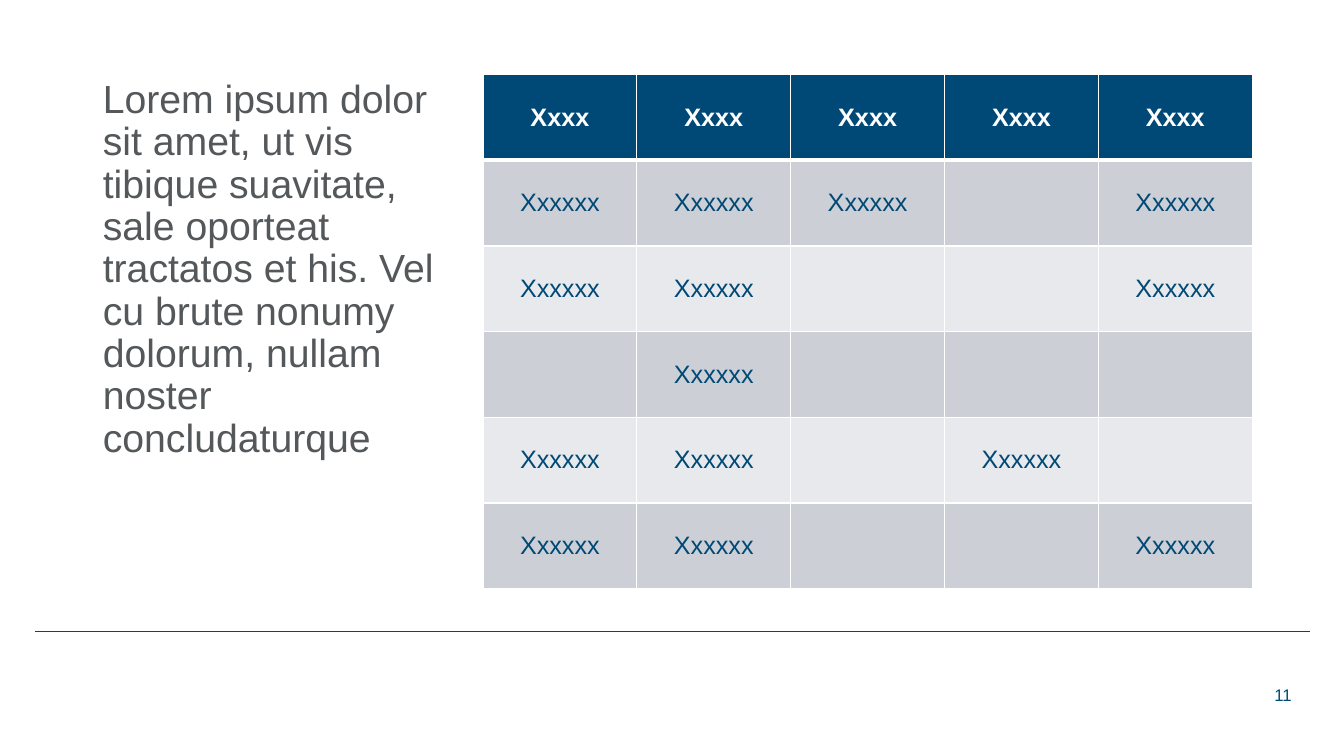
from dataclasses import dataclass

from lxml import etree
from pptx import Presentation
from pptx.dml.color import RGBColor
from pptx.enum import shapes, text
from pptx.oxml import ns
from pptx.util import Inches, Pt


@dataclass(frozen=True)
class Theme:
    font: str = "Arial"
    blue: str = "004976"
    grey: str = "54585A"
    white: str = "FFFFFF"
    bands: tuple = ("CCD0D6", "E7E9EC")
    intro_size: int = 28
    table_size: int = 18
    number_size: int = 12


THEME = Theme()
HEADER = ["Xxxx"] * 5
ENTRY = "Xxxxxx"
# Columns that hold an entry, for each body row
FILLED_COLUMNS = [(0, 1, 2, 4), (0, 1, 4), (1,), (0, 1, 3), (0, 1, 4)]


def write_text(frame, content, *, size, color, bold=False,
               align=text.PP_ALIGN.LEFT, spacing=None, before=None):
    paragraph = frame.paragraphs[0]
    paragraph.alignment = align
    paragraph.line_spacing = spacing
    paragraph.space_before = before
    run = paragraph.add_run()
    run.text = content
    run.font.name = THEME.font
    run.font.size = Pt(size)
    run.font.bold = bold
    run.font.color.rgb = RGBColor.from_string(color)


def place(shape, left, top, width, height):
    shape.left, shape.top = Inches(left), Inches(top)
    shape.width, shape.height = Inches(width), Inches(height)


def add_intro(slide, content):
    title, intro = slide.shapes.title, slide.placeholders[1]
    title.element.getparent().remove(title.element)
    place(intro, 0.92, 0.74, 3.7, 5.29)
    frame = intro.text_frame
    frame.word_wrap = True
    frame.auto_size = text.MSO_AUTO_SIZE.NONE
    frame.vertical_anchor = text.MSO_ANCHOR.TOP
    write_text(frame, content, size=THEME.intro_size, color=THEME.grey,
               spacing=0.9, before=Pt(10))


def add_footer_rule(slide):
    rule = slide.shapes.add_connector(
        shapes.MSO_CONNECTOR.STRAIGHT,
        Inches(0.35), Inches(6.26), Inches(12.99), Inches(6.26))
    rule.line.color.rgb = RGBColor.from_string(THEME.blue)
    rule.line.width = Pt(0.5)
    etree.SubElement(rule.element.spPr, ns.qn("a:effectLst"))


def add_page_number(slide, number):
    box = slide.shapes.add_textbox(
        Inches(12.48), Inches(6.66), Inches(0.49), Inches(0.47))
    box.text_frame.word_wrap = True
    box.text_frame.vertical_anchor = text.MSO_ANCHOR.MIDDLE
    write_text(box.text_frame, number, size=THEME.number_size,
               color=THEME.blue, align=text.PP_ALIGN.CENTER)


def set_borders(cell, **widths):
    properties = cell._tc.get_or_add_tcPr()
    for side in "LRTB":
        border = etree.SubElement(properties, ns.qn(f"a:ln{side}"),
                                  w=str(Pt(widths.get(side, 1))))
        fill = etree.SubElement(border, ns.qn("a:solidFill"))
        etree.SubElement(fill, ns.qn("a:srgbClr"), val=THEME.white)


def format_cell(cell, content, row):
    is_header = row == 0
    set_borders(cell, B=3 if is_header else 1, T=3 if row == 1 else 1)
    cell.fill.solid()
    cell.fill.fore_color.rgb = RGBColor.from_string(
        THEME.blue if is_header else THEME.bands[(row - 1) % 2])
    cell.vertical_anchor = text.MSO_ANCHOR.MIDDLE
    if content:
        write_text(cell.text_frame, content, size=THEME.table_size,
                   color=THEME.white if is_header else THEME.blue,
                   bold=is_header, align=text.PP_ALIGN.CENTER)


def add_grid(slide, rows):
    frame = slide.shapes.add_table(
        len(rows), len(rows[0]),
        Inches(4.79), Inches(0.74), Inches(7.63), Inches(5.1))
    for row, entries in enumerate(rows):
        for column, content in enumerate(entries):
            format_cell(frame.table.cell(row, column), content, row)


def main():
    deck = Presentation()
    deck.slide_width, deck.slide_height = Inches(13.33), Inches(7.5)
    # Section header layout: its body placeholder has no bullets
    slide = deck.slides.add_slide(deck.slide_layouts[2])

    # Footer
    add_footer_rule(slide)
    add_page_number(slide, "11")

    # Intro and table
    add_intro(slide, "Lorem ipsum dolor sit amet, ut vis tibique suavitate, "
                     "sale oporteat tractatos et his. Vel cu brute nonumy "
                     "dolorum, nullam noster concludaturque")
    body = [[ENTRY if column in filled else "" for column in range(len(HEADER))]
            for filled in FILLED_COLUMNS]
    add_grid(slide, [HEADER] + body)

    deck.save("out.pptx")


if __name__ == "__main__":
    main()
